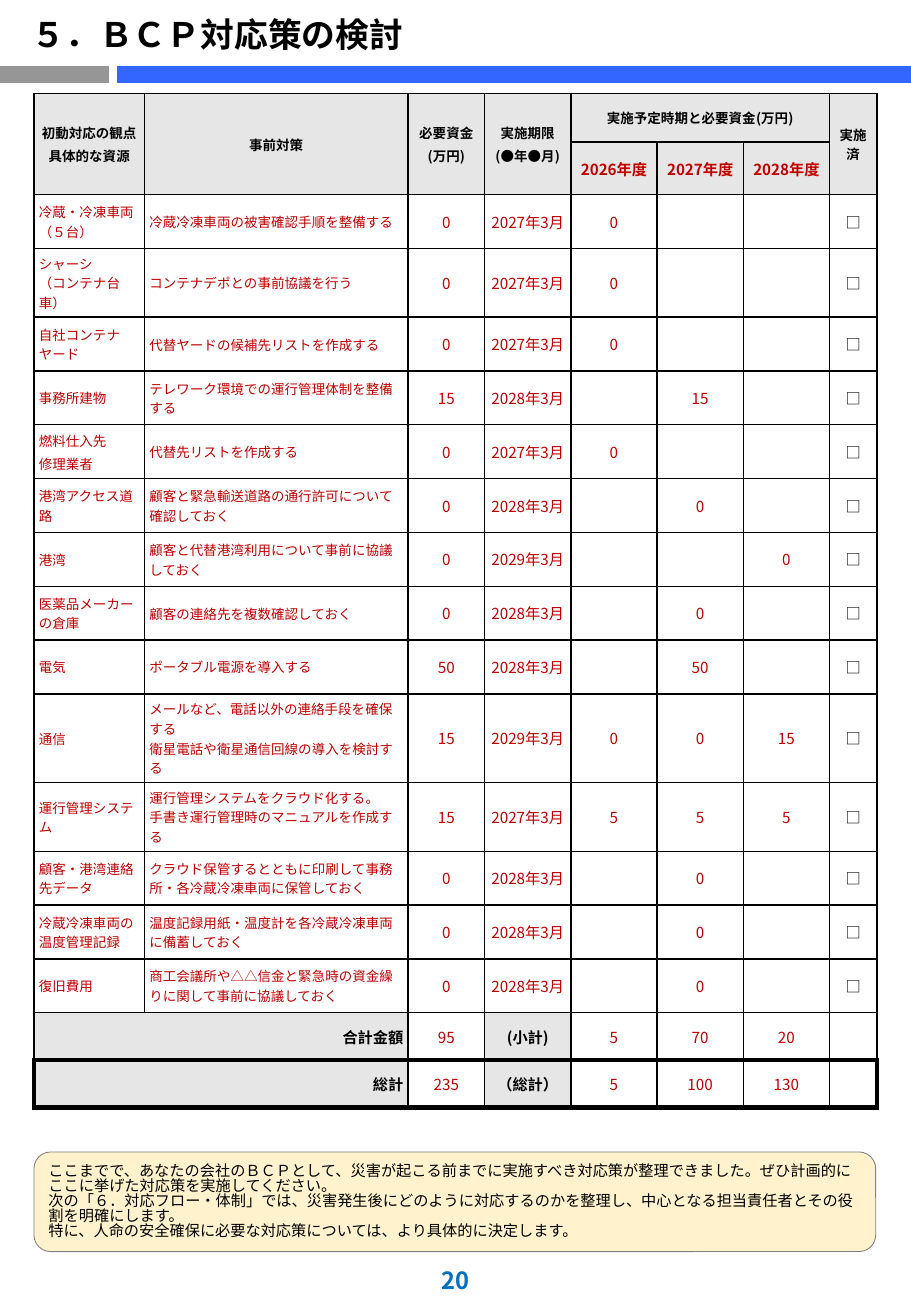
import lxml.etree
import pptx
import pptx.dml.color
import pptx.enum.shapes
import pptx.enum.text
import pptx.oxml.ns
import pptx.util

Inches = pptx.util.Inches
Align = pptx.enum.text.PP_ALIGN
Anchor = pptx.enum.text.MSO_ANCHOR
qualified = pptx.oxml.ns.qn

BLACK, RED, GREY = "000000", "C00000", "E7E6E6"
COLUMN_WIDTHS = [0.91, 2.17, 0.63] + [0.71] * 4 + [0.39]
HEADER_HEIGHTS = [0.4, 0.42]
TOTAL_HEIGHT = 0.39

HEADINGS = [
    (0, 0, "初動対応の観点|具体的な資源"), (0, 1, "事前対策"), (0, 2, "必要資金|(万円)"),
    (0, 3, "実施期限|(●年●月)"), (0, 4, "実施予定時期と必要資金(万円)"), (0, 7, "実施済"),
]
YEARS = ["2026年度", "2027年度", "2028年度"]
MEASURES = [
    ("冷蔵・冷凍車両（５台）", "冷蔵冷凍車両の被害確認手順を整備する", "0", "2027", ["0", "", ""], 0.44),
    ("シャーシ\n（コンテナ台車）", "コンテナデポとの事前協議を行う", "0", "2027", ["0", "", ""], 0.56),
    ("自社コンテナ\nヤード", "代替ヤードの候補先リストを作成する", "0", "2027", ["0", "", ""], 0.44),
    ("事務所建物", "テレワーク環境での運行管理体制を整備する", "15", "2028", ["", "15", ""], 0.44),
    ("燃料仕入先|修理業者", "代替先リストを作成する", "0", "2027", ["0", "", ""], 0.44),
    ("港湾アクセス道路", "顧客と緊急輸送道路の通行許可について確認しておく", "0", "2028", ["", "0", ""], 0.44),
    ("港湾", "顧客と代替港湾利用について事前に協議しておく", "0", "2029", ["", "", "0"], 0.44),
    ("医薬品メーカーの倉庫", "顧客の連絡先を複数確認しておく", "0", "2028", ["", "0", ""], 0.44),
    ("電気", "ポータブル電源を導入する", "50", "2028", ["", "50", ""], 0.44),
    ("通信", "メールなど、電話以外の連絡手段を確保する|衛星電話や衛星通信回線の導入を検討する",
     "15", "2029", ["0", "0", "15"], 0.73),
    ("運行管理システム", "運行管理システムをクラウド化する。|手書き運行管理時のマニュアルを作成する",
     "15", "2027", ["5", "5", "5"], 0.56),
    ("顧客・港湾連絡先データ", "クラウド保管するとともに印刷して事務所・各冷蔵冷凍車両に保管しておく",
     "0", "2028", ["", "0", ""], 0.44),
    ("冷蔵冷凍車両の\n温度管理記録", "温度記録用紙・温度計を各冷蔵冷凍車両に備蓄しておく",
     "0", "2028", ["", "0", ""], 0.44),
    ("復旧費用", "商工会議所や△△信金と緊急時の資金繰りに関して事前に協議しておく",
     "0", "2028", ["", "0", ""], 0.44),
]
TOTALS = [
    ["合計金額", "", "95", "(小計)", "5", "70", "20", ""],
    ["総計", "", "235", "（総計）", "5", "100", "130", ""],
]
ADVICE = (
    "ここまでで、あなたの会社のＢＣＰとして、災害が起こる前までに実施すべき対応策が整理できました。"
    "ぜひ計画的にここに挙げた対応策を実施してください。"
    "|次の「６．対応フロー・体制」では、災害発生後にどのように対応するのかを整理し、"
    "中心となる担当責任者とその役割を明確にします。"
    "|特に、人命の安全確保に必要な対応策については、より具体的に決定します。"
)


def colour(value):
    return pptx.dml.color.RGBColor.from_string(value)


class PlanPage:
    font = "Noto Sans CJK JP"

    def __init__(self, deck):
        self.page = deck.slides.add_slide(deck.slide_layouts[5])

    def set_text(self, frame, text, size, shade=BLACK, bold=False, align=Align.LEFT, gap=0, spacing=None):
        for index, line in enumerate(text.split("|")):
            para = frame.add_paragraph() if index else frame.paragraphs[0]
            para.text = line
            para.alignment = align
            if index and gap:
                para.space_before = pptx.util.Pt(gap)
            if spacing:
                para.line_spacing = spacing
            para.font.name = self.font
            para.font.size = pptx.util.Pt(size)
            para.font.bold = bold
            para.font.color.rgb = colour(shade)
            defaults = para._p.pPr.find(qualified("a:defRPr"))
            lxml.etree.SubElement(defaults, qualified("a:ea"), typeface=self.font)

    def title(self, text, left, top, width, height):
        box = self.page.shapes.title
        box.left, box.top, box.width, box.height = map(Inches, (left, top, width, height))
        box.text_frame.vertical_anchor = Anchor.BOTTOM
        box.text_frame.auto_size = pptx.enum.text.MSO_AUTO_SIZE.NONE
        self.set_text(box.text_frame, text, 20, bold=True)

    def rule(self, start, end, top, shade):
        line = self.page.shapes.add_connector(
            pptx.enum.shapes.MSO_CONNECTOR.STRAIGHT, Inches(start), Inches(top), Inches(end), Inches(top))
        line.line.color.rgb = colour(shade)
        line.line.width = pptx.util.Pt(10)
        lxml.etree.SubElement(line._element.spPr, qualified("a:effectLst"))

    def page_number(self, text, left, top, width, height):
        box = self.page.shapes.add_textbox(*map(Inches, (left, top, width, height)))
        box.text_frame.word_wrap = True
        box.text_frame.vertical_anchor = Anchor.BOTTOM
        self.set_text(box.text_frame, text, 14, "0070C0", True, Align.CENTER)

    def callout(self, text, left, top, width, height):
        box = self.page.shapes.add_shape(
            pptx.enum.shapes.MSO_SHAPE.ROUNDED_RECTANGLE, *map(Inches, (left, top, width, height)))
        box.shadow.inherit = False
        box.fill.solid()
        box.fill.fore_color.rgb = colour("FFF2CC")
        box.line.color.rgb = colour("808080")
        box.line.width = pptx.util.Pt(0.5)
        frame = box.text_frame
        frame.word_wrap = True
        frame.vertical_anchor = Anchor.MIDDLE
        frame.margin_left = frame.margin_right = Inches(0.08)
        frame.margin_top = frame.margin_bottom = Inches(0.04)
        self.set_text(frame, text, 9, spacing=0.83)

    def table(self, left, top, widths, heights):
        box = self.page.shapes.add_table(
            len(heights), len(widths), Inches(left), Inches(top), Inches(sum(widths)), Inches(sum(heights)))
        grid = box.table
        grid.first_row = grid.horz_banding = False
        for column, width in zip(grid.columns, widths):
            column.width = Inches(width)
        for row, height in zip(grid.rows, heights):
            row.height = Inches(height)
        last_row, last_column = len(heights) - 1, len(widths) - 1
        for row in range(len(heights)):
            for column in range(len(widths)):
                total = row == last_row
                thick = {"L": total and column == 0, "R": total and column == last_column,
                         "T": total, "B": row >= last_row - 1}
                self.frame_cell(grid.cell(row, column), thick)
        return grid

    def frame_cell(self, cell, thick):
        cell.margin_left = cell.margin_right = cell.margin_top = cell.margin_bottom = Inches(0.04)
        cell.vertical_anchor = Anchor.MIDDLE
        properties = cell._tc.get_or_add_tcPr()
        for side, heavy in thick.items():
            width = pptx.util.Pt(3 if heavy else 1)
            edge = lxml.etree.SubElement(properties, qualified("a:ln" + side), w=str(int(width)))
            fill = lxml.etree.SubElement(edge, qualified("a:solidFill"))
            lxml.etree.SubElement(fill, qualified("a:srgbClr"), val=BLACK)
        cell.fill.background()

    def shade_cell(self, cell):
        cell.fill.solid()
        cell.fill.fore_color.rgb = colour(GREY)

    def fill_headings(self, grid):
        for row, column, text in HEADINGS:
            cell = grid.cell(row, column)
            cell.merge(grid.cell(0, 6) if column == 4 else grid.cell(1, column))
            self.shade_cell(cell)
            self.set_text(cell.text_frame, text, 8, bold=True, align=Align.CENTER, gap=2)
        grid.cell(0, 7)._tc.get_or_add_tcPr().set("vert", "eaVert")
        for column, year in enumerate(YEARS, 4):
            self.shade_cell(grid.cell(1, column))
            self.set_text(grid.cell(1, column).text_frame, year, 9, RED, True, Align.CENTER)

    def fill_measures(self, grid):
        for row, (resource, measure, cost, due, amounts, _) in enumerate(MEASURES, 2):
            self.set_text(grid.cell(row, 0).text_frame, resource, 8, RED, gap=2)
            self.set_text(grid.cell(row, 1).text_frame, measure, 8, RED)
            for column, text in enumerate([cost, due + "年3月", *amounts, "□"], 2):
                shade = BLACK if text == "□" else RED
                self.set_text(grid.cell(row, column).text_frame, text, 9, shade, align=Align.CENTER)

    def fill_totals(self, grid):
        for row, texts in enumerate(TOTALS, 2 + len(MEASURES)):
            grid.cell(row, 0).merge(grid.cell(row, 1))
            for column, text in enumerate(texts):
                cell = grid.cell(row, column)
                label = column in (0, 3)
                if label:
                    self.shade_cell(cell)
                self.set_text(cell.text_frame, text, 9, BLACK if label else RED, label,
                              Align.RIGHT if column == 0 else Align.CENTER)


def main():
    deck = pptx.Presentation()
    deck.slide_width, deck.slide_height = Inches(7.5), Inches(10.83)
    plan = PlanPage(deck)
    plan.rule(0, 0.9, 0.61, "969696")
    plan.rule(0.96, 7.5, 0.61, "3366FF")
    plan.title("５．ＢＣＰ対応策の検討", 0.16, 0.04, 7.17, 0.46)
    heights = HEADER_HEIGHTS + [measure[-1] for measure in MEASURES] + [TOTAL_HEIGHT] * len(TOTALS)
    grid = plan.table(0.28, 0.77, COLUMN_WIDTHS, heights)
    plan.fill_headings(grid)
    plan.fill_measures(grid)
    plan.fill_totals(grid)
    plan.page_number("20", 0, 10.3, 7.5, 0.4)
    plan.callout(ADVICE, 0.28, 9.48, 6.93, 0.82)
    deck.save("out.pptx")


if __name__ == "__main__":
    main()
